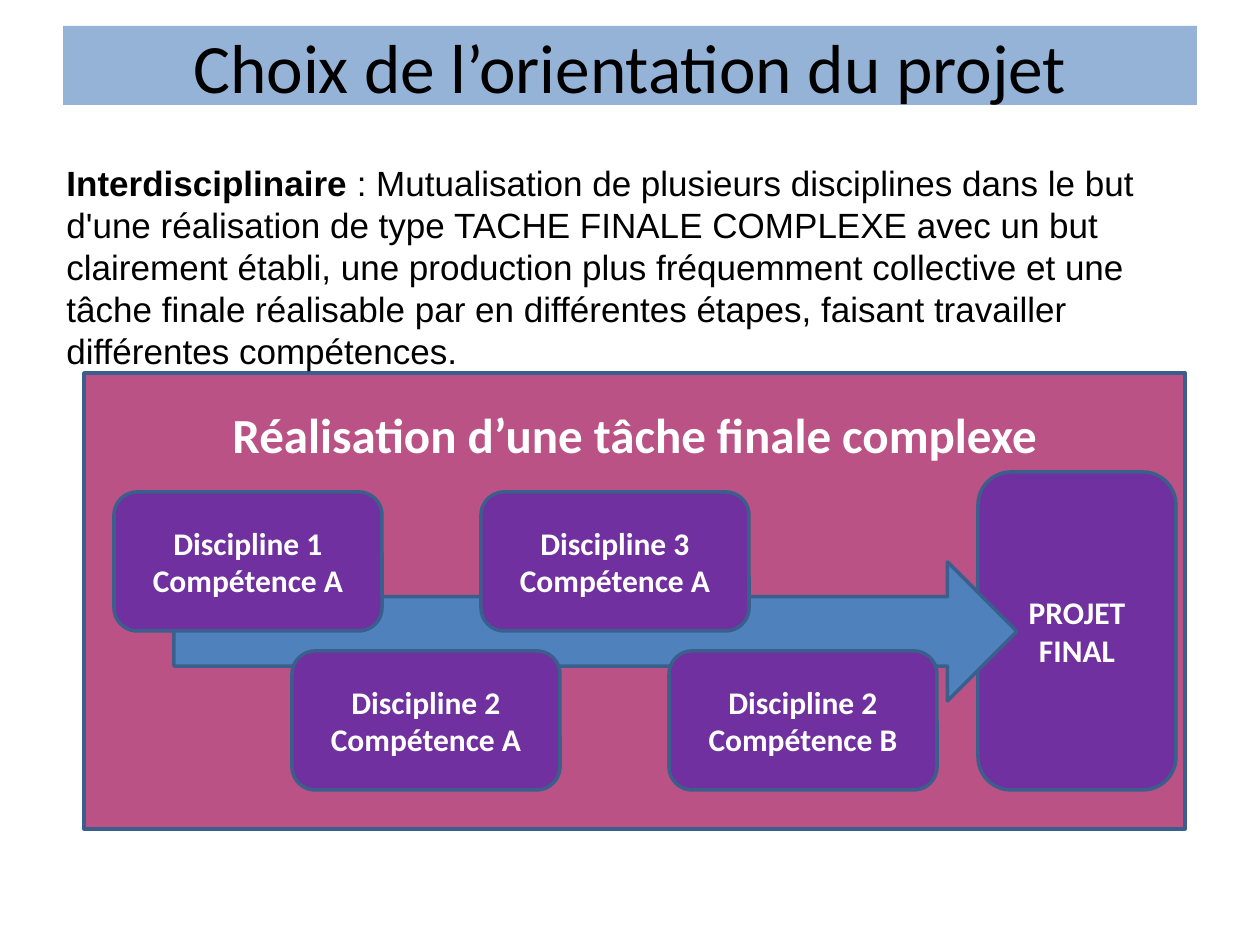
import pptx
import pptx.util
import pptx.dml.color
import pptx.enum.shapes
import pptx.enum.text
from dataclasses import dataclass

SHAPE = pptx.enum.shapes.MSO_SHAPE
ALIGN = pptx.enum.text.PP_ALIGN
ANCHOR = pptx.enum.text.MSO_ANCHOR
PX = 914400 / 126


@dataclass(frozen=True)
class Theme:
    banner: str = "95B3D7"
    panel: str = "BA5286"
    box: str = "7030A0"
    arrow: str = "4F81BD"
    outline: str = "3A5F8C"
    dark: str = "000000"
    light: str = "FFFFFF"
    title_size: float = 39.6
    heading_size: int = 28
    body_size: int = 20
    box_size: int = 18


theme = Theme()


def write(tf, text, size, color, font="Calibri", bold=False, lead="",
          align=ALIGN.CENTER, anchor=ANCHOR.MIDDLE, spacing=None):
    """Write one paragraph per line of text, after an optional bold lead."""
    tf.word_wrap = True
    tf.auto_size = pptx.enum.text.MSO_AUTO_SIZE.NONE
    tf.vertical_anchor = anchor
    for i, line in enumerate(text.split("\n")):
        p = tf.paragraphs[0] if i == 0 else tf.add_paragraph()
        p.alignment = align
        if spacing:
            p.line_spacing = pptx.util.Pt(spacing)
        runs = [(line, bold)]
        if lead and i == 0:
            runs.insert(0, (lead, True))
        for words, heavy in runs:
            r = p.add_run()
            r.text = words
            r.font.name = font
            r.font.size = pptx.util.Pt(size)
            r.font.bold = heavy
            r.font.color.rgb = pptx.dml.color.RGBColor.from_string(color)


def add_box(kind, x, y, w, h, fill):
    sp = s.shapes.add_shape(kind, *(round(v * PX) for v in (x, y, w, h)))
    sp.shadow.inherit = False
    sp.fill.solid()
    sp.fill.fore_color.rgb = pptx.dml.color.RGBColor.from_string(fill)
    sp.line.color.rgb = pptx.dml.color.RGBColor.from_string(theme.outline)
    sp.line.width = pptx.util.Pt(2)
    return sp


prs = pptx.Presentation()
prs.slide_width = round(1260 * PX)
prs.slide_height = round(945 * PX)
s = prs.slides.add_slide(prs.slide_layouts[5])

# Title banner
title = s.shapes.title
title.left, title.top, title.width, title.height = (
    round(v * PX) for v in (63, 26, 1134, 79))
title.fill.solid()
title.fill.fore_color.rgb = pptx.dml.color.RGBColor.from_string(theme.banner)
write(title.text_frame, "Choix de l’orientation du projet",
      theme.title_size, theme.dark)

# Panel and final project
panel = add_box(SHAPE.RECTANGLE, 84, 373, 1101, 456, theme.panel)
panel.text_frame.margin_top = round(32 * PX)
write(panel.text_frame, "Réalisation d’une tâche finale complexe",
      theme.heading_size, theme.light, bold=True, anchor=ANCHOR.TOP)
project = add_box(SHAPE.ROUNDED_RECTANGLE, 978, 472, 198, 318, theme.box)
write(project.text_frame, "PROJET FINAL", theme.box_size, theme.light, bold=True)

# Definition
definition = s.shapes.add_textbox(*(round(v * PX) for v in (54, 155, 1150, 223)))
write(definition.text_frame,
      ": Mutualisation de plusieurs disciplines dans le but\n"
      "d'une réalisation de type TACHE FINALE COMPLEXE avec un but\n"
      "clairement établi, une production plus fréquemment collective et une\n"
      "tâche finale réalisable par en différentes étapes, faisant travailler\n"
      "différentes compétences.",
      theme.body_size, theme.dark, font="Arial", lead="Interdisciplinaire ",
      align=ALIGN.LEFT, anchor=ANCHOR.TOP, spacing=24)

# Steps along the arrow, alternately above and below it
add_box(SHAPE.RIGHT_ARROW, 174, 562, 843, 139, theme.arrow)
steps = [
    (114, "Discipline 1\nCompétence A"),
    (292, "Discipline 2\nCompétence A"),
    (481, "Discipline 3\nCompétence A"),
    (669, "Discipline 2\nCompétence B"),
]
for i, (x, text) in enumerate(steps):
    sp = add_box(SHAPE.ROUNDED_RECTANGLE, x, (492, 651)[i % 2], 268, 139, theme.box)
    write(sp.text_frame, text, theme.box_size, theme.light, bold=True)

prs.save("out.pptx")
